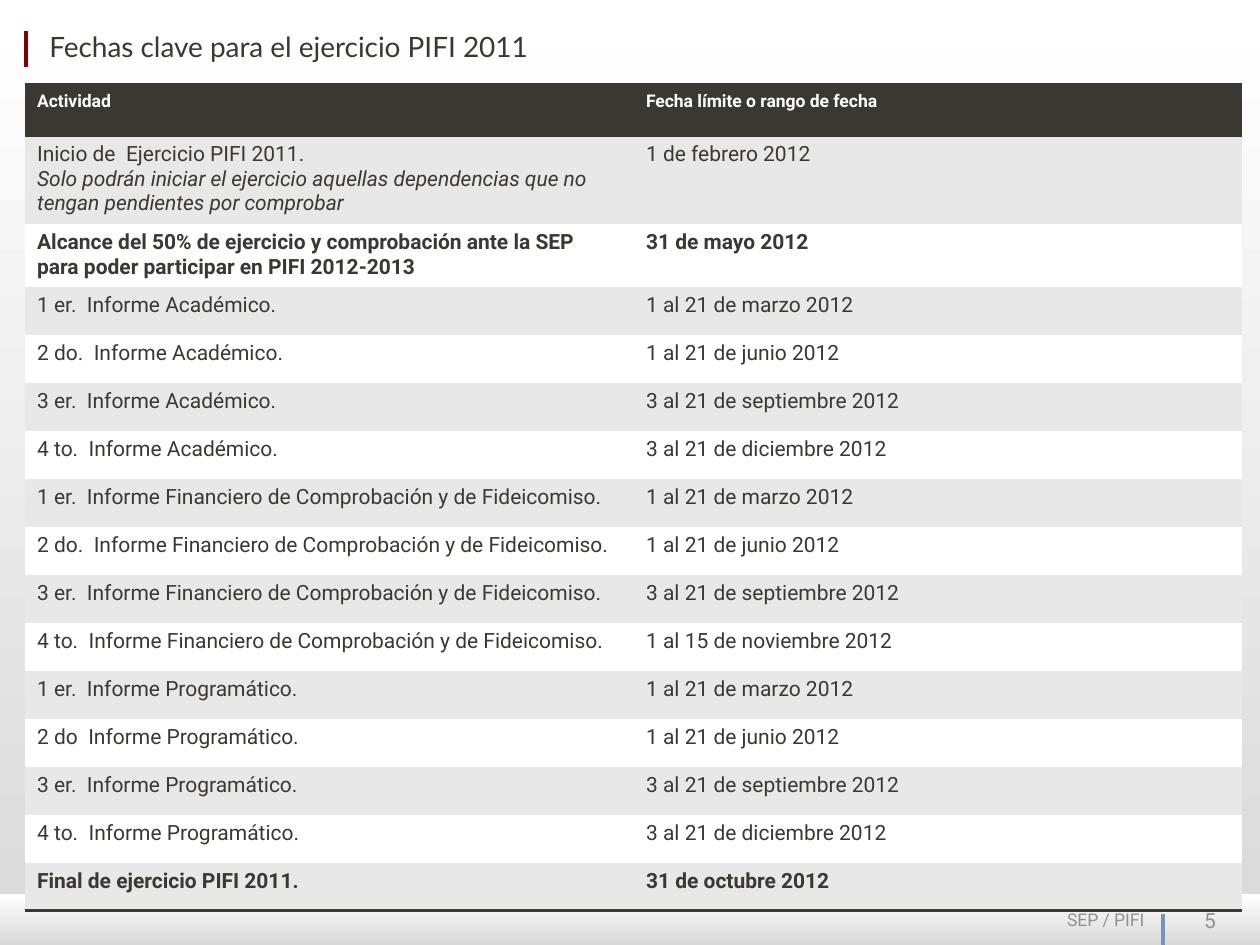
import dataclasses

import pptx
import pptx.dml.color
import pptx.enum.shapes
import pptx.enum.text
import pptx.oxml
import pptx.oxml.ns
import pptx.util

Pt = pptx.util.Pt
ALIGN = pptx.enum.text.PP_ALIGN
ANCHOR = pptx.enum.text.MSO_ANCHOR


@dataclasses.dataclass(frozen=True)
class Theme:
    """Colours, fonts and type sizes of the slide."""
    ink: str = "3B3732"
    white: str = "FFFFFF"
    band: str = "E8E8E8"
    shade: str = "D9D9D9"
    red: str = "800000"
    blue: str = "7894BB"
    grey: str = "929190"
    head: str = "Lato"
    body: str = "Roboto"
    title: int = 16
    text: int = 12
    small: int = 10
    rule: float = 2.25
    edge: int = 2
    style: str = "{2D5ABB26-0587-4C30-8999-92F81FD0307C}"


T = Theme()

DATES = {
    "Académico": ["1 al 21 de marzo", "1 al 21 de junio",
                  "3 al 21 de septiembre", "3 al 21 de diciembre"],
    "Financiero de Comprobación y de Fideicomiso": [
        "1 al 21 de marzo", "1 al 21 de junio",
        "3 al 21 de septiembre", "1 al 15 de noviembre"],
    "Programático": ["1 al 21 de marzo", "1 al 21 de junio",
                     "3 al 21 de septiembre", "3 al 21 de diciembre"],
}


def rgb(code):
    """Return the colour for a hex code."""
    return pptx.dml.color.RGBColor.from_string(code)


def write(frame, text, font=T.body, size=T.text, color=T.ink, bold=False,
          slant=(), align=ALIGN.LEFT, anchor=ANCHOR.TOP):
    """Fill a text frame, one paragraph a line, with the given format."""
    frame.word_wrap = True
    frame.vertical_anchor = anchor
    for i, line in enumerate(text.split("\n")):
        para = frame.paragraphs[0] if i == 0 else frame.add_paragraph()
        para.alignment = align
        run = para.add_run()
        run.text = line
        run.font.name, run.font.size = font, Pt(size)
        run.font.bold, run.font.italic = bold, i in slant
        run.font.color.rgb = rgb(color)


def blend(fill, start, end, angle):
    """Give a fill a two-colour gradient."""
    fill.gradient()
    fill.gradient_angle = angle
    for stop, code in zip(fill.gradient_stops, (start, end)):
        stop.color.rgb = rgb(code)


def stroke(slide, x, top, end, color):
    """Draw an upright rule."""
    kind = pptx.enum.shapes.MSO_CONNECTOR.STRAIGHT
    line = slide.shapes.add_connector(kind, Pt(x), Pt(top), Pt(x), Pt(end))
    line.line.color.rgb = rgb(color)
    line.line.width = Pt(T.rule)
    pptx.oxml.ns.qn("a:effectLst")
    line._element.spPr.append(pptx.oxml.parse_xml(
        f'<a:effectLst {pptx.oxml.ns.nsdecls("a")}/>'))


def label(slide, text, x, y, w, h, **form):
    """Place a text box."""
    box = slide.shapes.add_textbox(Pt(x), Pt(y), Pt(w), Pt(h))
    write(box.text_frame, text, color=T.grey, anchor=ANCHOR.MIDDLE, **form)


def header(slide, x, y, w, h):
    """Place the title and the red rule beside it."""
    title = slide.shapes.title
    title.left, title.top = Pt(x + 6), Pt(y)
    title.width, title.height = Pt(w - 6), Pt(h)
    title.text_frame.auto_size = pptx.enum.text.MSO_AUTO_SIZE.NONE
    write(title.text_frame, "Fechas clave para el ejercicio PIFI 2011",
          font=T.head, size=T.title)
    stroke(slide, x, y + 4.5, y + 25.5, T.red)


def footer(slide, x, y, w, h):
    """Place the bottom bar with the source, rule and page number."""
    bar = slide.shapes.add_shape(pptx.enum.shapes.MSO_SHAPE.RECTANGLE,
                                 Pt(x), Pt(y), Pt(w), Pt(h))
    bar.shadow.inherit = False
    bar.line.fill.background()
    blend(bar.fill, T.white, T.shade, 270)
    mid = x + w - 55.5
    stroke(slide, mid, y + 11.5, y + h, T.blue)
    label(slide, "5", mid + 1, y + 0.5, 52, h - 0.5, align=ALIGN.CENTER)
    label(slide, "SEP / PIFI", mid - 296.5, y, 293, h,
          size=T.small, align=ALIGN.RIGHT)


def edge(cell, side):
    """Draw a dark border on one side of a cell."""
    cell._tc.get_or_add_tcPr().append(pptx.oxml.parse_xml(
        f'<a:ln{side} {pptx.oxml.ns.nsdecls("a")} w="{Pt(T.edge)}">'
        f'<a:solidFill><a:srgbClr val="{T.ink}"/></a:solidFill></a:ln{side}>'))


def entries():
    """Return the table rows as activity, date and format."""
    rows = [
        ("Actividad", "Fecha límite o rango de fecha",
         dict(size=T.small, color=T.white, bold=True)),
        ("Inicio de  Ejercicio PIFI 2011.\nSolo podrán iniciar el ejercicio "
         "aquellas dependencias que no tengan pendientes por comprobar",
         "1 de febrero 2012", dict(slant=(1,))),
        ("Alcance del 50% de ejercicio y comprobación ante la SEP para poder "
         "participar en PIFI 2012-2013", "31 de mayo 2012", dict(bold=True)),
    ]
    for kind, dates in DATES.items():
        second = "2 do" if kind == "Programático" else "2 do."
        for rank, date in zip(("1 er.", second, "3 er.", "4 to."), dates):
            rows.append((f"{rank}  Informe {kind}.", f"{date} 2012", {}))
    rows.append(("Final de ejercicio PIFI 2011.", "31 de octubre 2012",
                 dict(bold=True)))
    return rows


def dates(slide, x, y, w, h):
    """Place the banded table of key dates."""
    rows = entries()
    last = len(rows) - 1
    tall = [29, 49, 35.5]
    tall += [(h - sum(tall)) / (len(rows) - 3)] * (len(rows) - 3)
    frame = slide.shapes.add_table(len(rows), 2, Pt(x), Pt(y), Pt(w), Pt(h))
    grid = frame.table
    grid.horz_banding = False
    grid._tbl.tblPr.find(pptx.oxml.ns.qn("a:tableStyleId")).text = T.style
    for col in grid.columns:
        col.width = Pt(w / 2)
    for r, (*texts, form) in enumerate(rows):
        grid.rows[r].height = Pt(tall[r])
        fill = T.ink if r == 0 else T.band if r % 2 else T.white
        for c, text in enumerate(texts):
            cell = grid.cell(r, c)
            write(cell.text_frame, text, **form)
            for side in {0: "TB", last: "B"}.get(r, ""):
                edge(cell, side)
            cell.fill.solid()
            cell.fill.fore_color.rgb = rgb(fill)


def main():
    """Build and save the slide."""
    deck = pptx.Presentation()
    deck.slide_width, deck.slide_height = Pt(720), Pt(540)
    slide = deck.slides.add_slide(deck.slide_layouts[5])
    blend(slide.background.fill, T.shade, T.white, 90)
    header(slide, 15, 13, 606, 33)
    footer(slide, 0, 511, 720, 29)
    dates(slide, 14, 48.5, 696, 470)
    deck.save("out.pptx")


if __name__ == "__main__":
    main()
